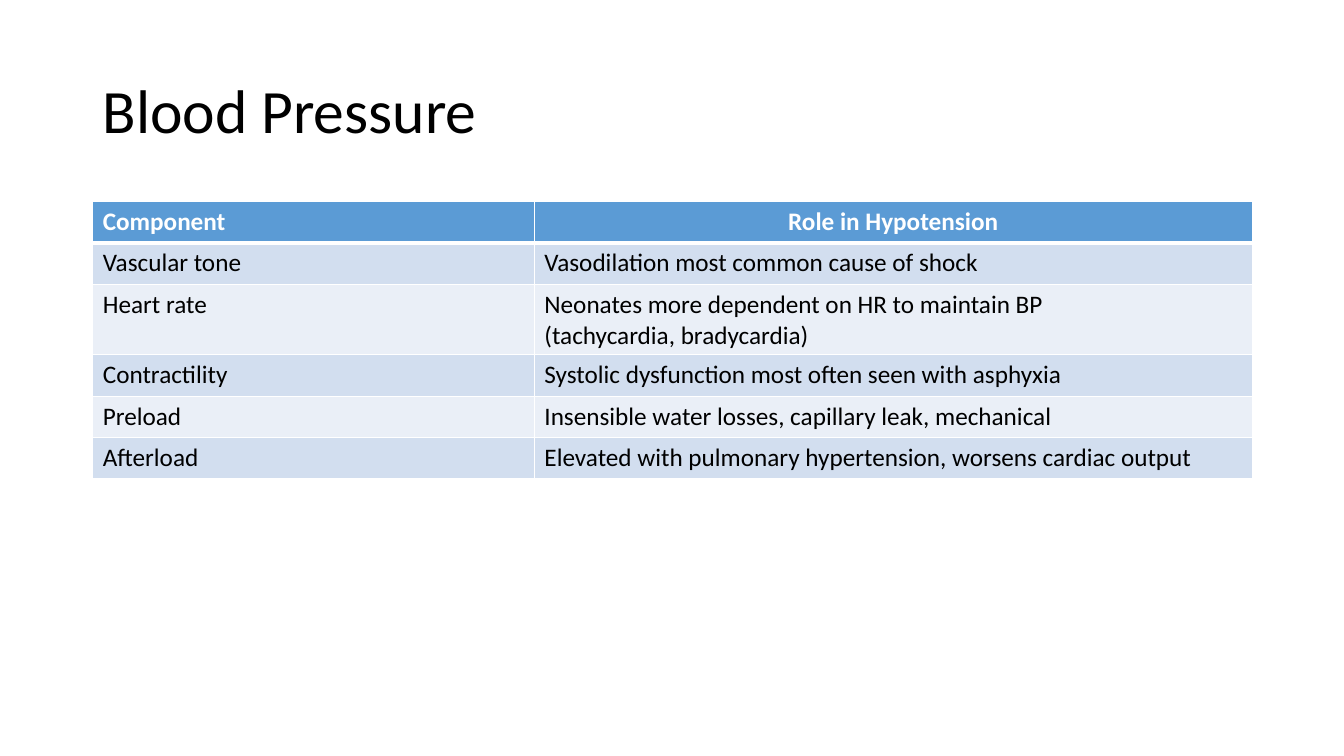
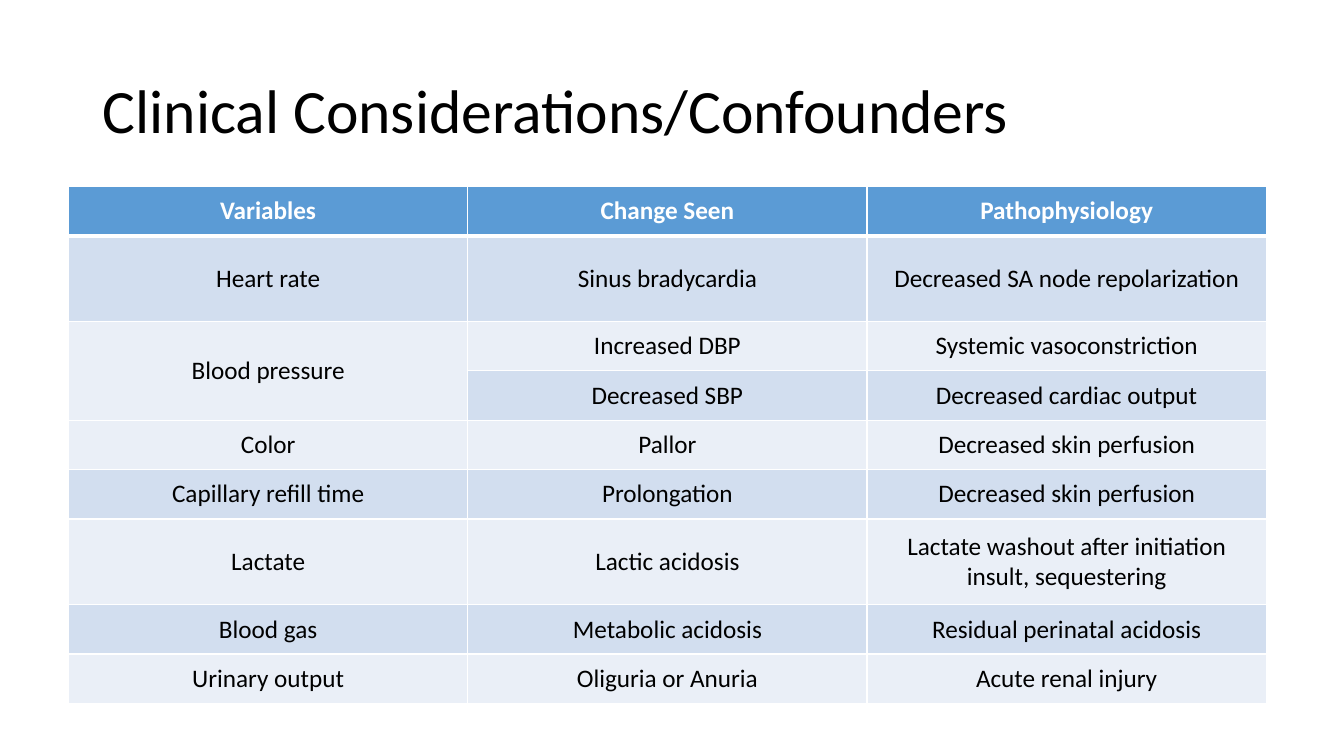
from dataclasses import dataclass

import pptx
import pptx.dml.color
import pptx.enum.text
import pptx.oxml
import pptx.oxml.ns
import pptx.presentation
import pptx.slide
import pptx.table
import pptx.util
from lxml import etree

RGB = pptx.dml.color.RGBColor
ALIGN = pptx.enum.text.PP_ALIGN
ANCHOR = pptx.enum.text.MSO_ANCHOR
Pt = pptx.util.Pt

BLACK = RGB(0x00, 0x00, 0x00)
WHITE = RGB(0xFF, 0xFF, 0xFF)
BLUE = RGB(0x5B, 0x9B, 0xD5)
BANDS = (RGB(0xEA, 0xEF, 0xF7), RGB(0xD2, 0xDE, 0xEF))
FONT = "Calibri"
SCALE = 9144  # EMU in one px, 100 px to the inch
THIN, THICK = 1, 3


@dataclass(frozen=True)
class Grid:
    left: int
    top: int
    cols: tuple[int, ...]
    heights: tuple[int, ...]
    rows: tuple[tuple[str, ...], ...]
    head: tuple[ALIGN, ...]
    body: ALIGN
    anchor: ANCHOR
    inset: int
    merges: tuple[tuple[int, int, int, int], ...] = ()


@dataclass(frozen=True)
class Page:
    title: str
    grid: Grid


PAGES = (
    Page("Blood Pressure", Grid(
        92, 200, (438, 712), (41, 41, 68, 41, 41, 41),
        (
            ("Component", "Role in Hypotension"),
            ("Vascular tone", "Vasodilation most common cause of shock"),
            ("Heart rate", "Neonates more dependent on HR to maintain BP\n"
                           "(tachycardia, bradycardia)"),
            ("Contractility",
             "Systolic dysfunction most often seen with asphyxia"),
            ("Preload", "Insensible water losses, capillary leak, mechanical"),
            ("Afterload", "Elevated with pulmonary hypertension, "
                          "worsens cardiac output"),
        ),
        (ALIGN.LEFT, ALIGN.CENTER), ALIGN.LEFT, ANCHOR.TOP, 10)),
    Page("Clinical Considerations/Confounders", Grid(
        68, 185, (396,) * 3, (49, 85, 49, 49, 49, 49, 85, 49, 49),
        (
            ("Variables", "Change Seen", "Pathophysiology"),
            ("Heart rate", "Sinus bradycardia",
             "Decreased SA node repolarization"),
            ("Blood pressure", "Increased DBP", "Systemic vasoconstriction"),
            ("", "Decreased SBP", "Decreased cardiac output"),
            ("Color", "Pallor", "Decreased skin perfusion"),
            ("Capillary refill time", "Prolongation",
             "Decreased skin perfusion"),
            ("Lactate", "Lactic acidosis",
             "Lactate washout after initiation insult, sequestering"),
            ("Blood gas", "Metabolic acidosis", "Residual perinatal acidosis"),
            ("Urinary output", "Oliguria or Anuria", "Acute renal injury"),
        ),
        (ALIGN.CENTER,) * 3, ALIGN.CENTER, ANCHOR.MIDDLE, 9,
        ((2, 0, 3, 0),))),
)


def px(size: int) -> pptx.util.Emu:
    return pptx.util.Emu(size * SCALE)


def style(par, size: int, color: RGB, bold: bool = False) -> None:
    font = par.font
    font.name, font.size, font.bold = FONT, Pt(size), bold
    font.color.rgb = color


def edge(cell: pptx.table._Cell, top: int, bottom: int) -> None:
    """Draw white borders; the outline must precede the fill in the XML."""
    props = cell._tc.get_or_add_tcPr()
    widths = {"L": THIN, "R": THIN, "T": top, "B": bottom}
    for spot, (side, width) in enumerate(widths.items()):
        line = etree.Element(pptx.oxml.ns.qn(f"a:ln{side}"), w=str(Pt(width)))
        fill = etree.SubElement(line, pptx.oxml.ns.qn("a:solidFill"))
        etree.SubElement(fill, pptx.oxml.ns.qn("a:srgbClr"), val=str(WHITE))
        props.insert(spot, line)


def add_title(slide: pptx.slide.Slide, text: str) -> None:
    frame = slide.shapes.add_textbox(
        px(92), px(40), px(1150), px(145)).text_frame
    frame.word_wrap = True
    frame.vertical_anchor = ANCHOR.MIDDLE
    par = frame.paragraphs[0]
    par.text = text
    par.line_spacing = 0.9
    style(par, 44, BLACK)


def add_cell(cell: pptx.table._Cell, text: str, row: int, col: int,
             grid: Grid) -> None:
    first = row == 0
    cell.text = text
    cell.vertical_anchor = grid.anchor
    cell.margin_left = cell.margin_right = px(grid.inset)
    cell.margin_top = cell.margin_bottom = px(5)
    cell.fill.solid()
    cell.fill.fore_color.rgb = BLUE if first else BANDS[row % 2]
    for par in cell.text_frame.paragraphs:
        par.alignment = grid.head[col] if first else grid.body
        style(par, 18, WHITE if first else BLACK, first)
    edge(cell, THICK if row == 1 else THIN, THICK if first else THIN)


def add_grid(slide: pptx.slide.Slide, grid: Grid) -> None:
    table = slide.shapes.add_table(
        len(grid.rows), len(grid.cols), px(grid.left), px(grid.top),
        px(sum(grid.cols)), px(sum(grid.heights))).table
    for col, width in zip(table.columns, grid.cols):
        col.width = px(width)
    for row, height in zip(table.rows, grid.heights):
        row.height = px(height)
    for row, texts in enumerate(grid.rows):
        for col, text in enumerate(texts):
            add_cell(table.cell(row, col), text, row, col, grid)
    for top, left, bottom, right in grid.merges:
        table.cell(top, left).merge(table.cell(bottom, right))


def main() -> None:
    deck = pptx.Presentation()
    deck.slide_width, deck.slide_height = px(1333), px(750)
    blank = deck.slide_layouts[6]
    for page in PAGES:
        slide = deck.slides.add_slide(blank)
        add_title(slide, page.title)
        add_grid(slide, page.grid)
    deck.save("out.pptx")


if __name__ == "__main__":
    main()
